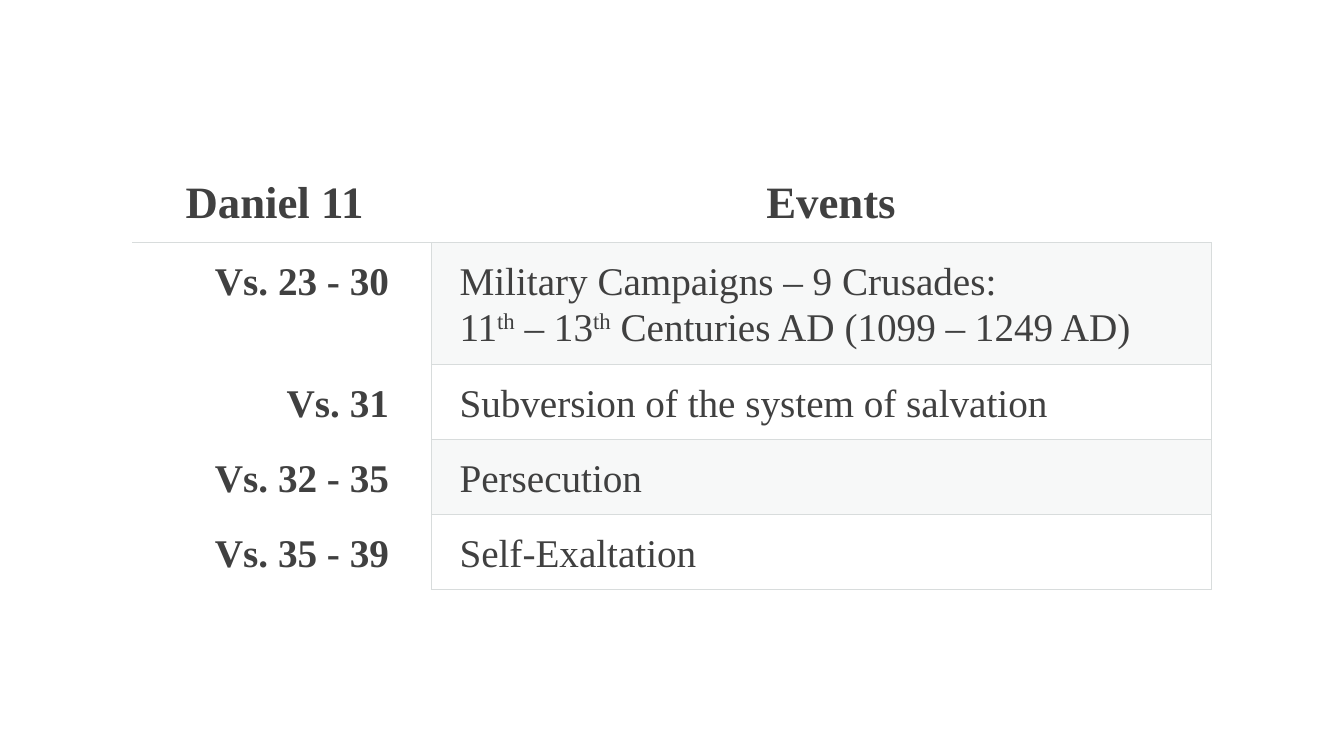
from dataclasses import dataclass

from lxml import etree
from pptx import Presentation
from pptx.dml.color import RGBColor
from pptx.enum.text import PP_ALIGN
from pptx.oxml.ns import qn
from pptx.util import Cm, Pt

LEFT, CENTER, RIGHT = PP_ALIGN.LEFT, PP_ALIGN.CENTER, PP_ALIGN.RIGHT


@dataclass(frozen=True)
class Theme:
    font: str = "Times New Roman"
    text: str = "404040"
    rule: str = "D8DCDC"
    band: str = "D8DEDC"
    band_alpha: int = 20
    header_size: int = 32
    body_size: int = 28
    rule_width: float = 0.75
    spacing: float = 1.07


THEME = Theme()
HEADERS = ("Daniel 11", "Events")
ROWS = (
    ("Vs. 23 - 30", (
        ("Military Campaigns – 9 Crusades:",),
        ("11", "th", " – 13", "th", " Centuries AD (1099 – 1249 AD)"),
    )),
    ("Vs. 31", (("Subversion of the system of salvation",),)),
    ("Vs. 32 - 35", (("Persecution",),)),
    ("Vs. 35 - 39", (("Self-Exaltation",),)),
)
COL_WIDTHS = (7.54, 19.67)
ROW_HEIGHTS = (2.03, 3.07, 1.89, 1.89, 1.89)


def write_cell(cell, lines, size, bold, align):
    tf = cell.text_frame
    for i, parts in enumerate(lines):
        p = tf.add_paragraph() if i else tf.paragraphs[0]
        p.alignment = align
        p.line_spacing = THEME.spacing
        for part in parts:
            r = p.add_run()
            r.text = part
            r.font.name = THEME.font
            r.font.size = Pt(size)
            r.font.bold = bold
            r.font.color.rgb = RGBColor.from_string(THEME.text)
            if part == "th":
                r._r.get_or_add_rPr().set("baseline", "30000")


def set_borders(cell, ruled):
    tcPr = cell._tc.get_or_add_tcPr()
    for side in "LRTB":
        ln = etree.SubElement(tcPr, qn(f"a:ln{side}"), w=str(Pt(THEME.rule_width)))
        if side in ruled:
            fill = etree.SubElement(ln, qn("a:solidFill"))
            etree.SubElement(fill, qn("a:srgbClr"), val=THEME.rule)
        else:
            etree.SubElement(ln, qn("a:noFill"))


def set_fill(cell, banded):
    if not banded:
        cell.fill.background()
        return
    cell.fill.solid()
    cell.fill.fore_color.rgb = RGBColor.from_string(THEME.band)
    color = cell._tc.tcPr.find(f"{qn('a:solidFill')}/{qn('a:srgbClr')}")
    etree.SubElement(color, qn("a:alpha"), val=str(THEME.band_alpha * 1000))


def add_events_table(s, left, top, width, height):
    table = s.shapes.add_table(
        len(ROWS) + 1, len(HEADERS), left, top, width, height).table
    table.first_row = table.horz_banding = False
    for col, w in zip(table.columns, COL_WIDTHS):
        col.width = Cm(w)
    for row, h in zip(table.rows, ROW_HEIGHTS):
        row.height = Cm(h)

    for j, header in enumerate(HEADERS):
        write_cell(table.cell(0, j), ((header,),), THEME.header_size, True, CENTER)
    for i, (verses, events) in enumerate(ROWS, 1):
        write_cell(table.cell(i, 0), ((verses,),), THEME.body_size, True, RIGHT)
        write_cell(table.cell(i, 1), events, THEME.body_size, False, LEFT)

    for i in range(len(ROWS) + 1):
        for j in range(len(HEADERS)):
            cell = table.cell(i, j)
            cell.margin_left = Cm(0.71)
            cell.margin_right = Cm(0.23 if j else 1.07)
            cell.margin_top = cell.margin_bottom = Cm(0.36)
            if i == 0:
                ruled = "B"
            elif j == 1:
                ruled = "LRTB"
            else:
                ruled = "RT" if i == 1 else "R"
            set_borders(cell, ruled)
            set_fill(cell, j == 1 and i % 2 == 1)


def main():
    prs = Presentation()
    prs.slide_width, prs.slide_height = Cm(33.87), Cm(19.05)
    s = prs.slides.add_slide(prs.slide_layouts[6])
    add_events_table(s, Cm(3.33), Cm(4.06), Cm(sum(COL_WIDTHS)), Cm(sum(ROW_HEIGHTS)))
    prs.save("out.pptx")


if __name__ == "__main__":
    main()
